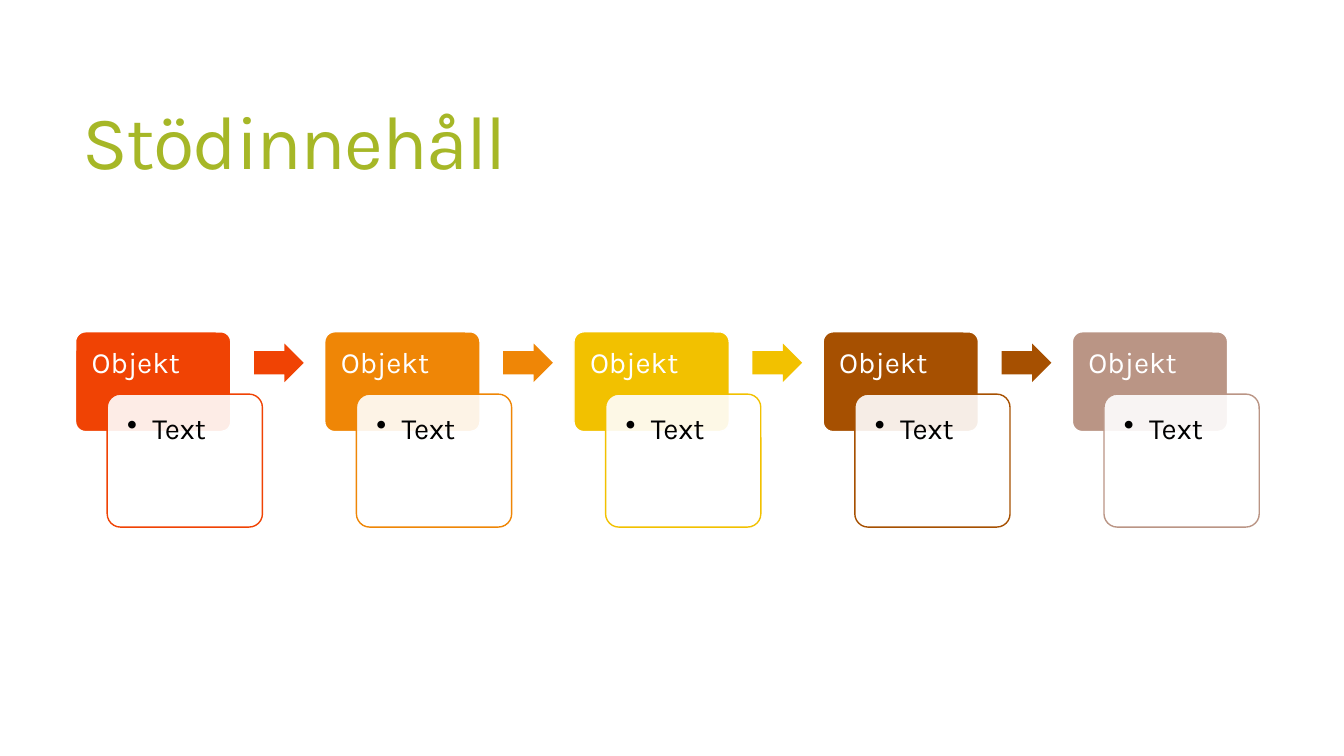
import pptx
import pptx.dml.color
import pptx.enum.shapes
import pptx.enum.text
import pptx.oxml.ns
import pptx.util
from lxml import etree

Pt = pptx.util.Pt
SHAPE = pptx.enum.shapes.MSO_SHAPE
ALIGN = pptx.enum.text.PP_ALIGN
ANCHOR = pptx.enum.text.MSO_ANCHOR

FONT = "Karla"
STEP_COLORS = ["F04304", "EF8606", "F2C100", "A65001", "BA9585"]
STEP_LEFT, STEP_PITCH = 54, 178
BOX_WIDTH = 110.9


def color(hex_value):
    return pptx.dml.color.RGBColor.from_string(hex_value)


def apply(target, values):
    for name, value in values.items():
        setattr(target, name, value)


def add_xml(parent, tag, **attributes):
    return etree.SubElement(parent, pptx.oxml.ns.qn(tag), attributes)


def write(shape, text, size, hex_value, inset, anchor=ANCHOR.TOP, spacing=0.9):
    """Put one left-aligned line of text in a shape and return its paragraph."""
    frame = shape.text_frame
    frame.text = text
    apply(frame, {
        "word_wrap": True,
        "auto_size": pptx.enum.text.MSO_AUTO_SIZE.NONE,
        "vertical_anchor": anchor,
        "margin_left": Pt(inset),
        "margin_right": Pt(inset),
        "margin_top": Pt(inset),
        "margin_bottom": Pt(inset),
    })
    para = frame.paragraphs[0]
    apply(para, {"alignment": ALIGN.LEFT, "line_spacing": spacing})
    span = para.runs[0]
    apply(span.font, {"name": FONT, "size": Pt(size)})
    span.font.color.rgb = color(hex_value)
    return para


def add_bullet(para, indent):
    properties = para._p.get_or_add_pPr()
    properties.set("marL", str(Pt(indent)))
    properties.set("indent", str(-Pt(indent)))
    add_xml(properties, "a:buChar", char="•")


def add_block(page, kind, place, fill, line=None, adjustments=(0.1,)):
    block = page.shapes.add_shape(kind, *map(Pt, place))
    block.shadow.inherit = False
    for index, value in enumerate(adjustments):
        block.adjustments[index] = value
    block.fill.solid()
    block.fill.fore_color.rgb = color(fill)
    if line:
        block.line.color.rgb = color(line)
        block.line.width = Pt(1)
    else:
        block.line.fill.background()
    return block


def set_opacity(shape, percent):
    fill = shape._element.spPr.find(pptx.oxml.ns.qn("a:solidFill"))
    add_xml(fill[0], "a:alpha", val=str(percent * 1000))


def add_title(page, text):
    title = page.shapes.title
    apply(title, {"left": Pt(51.8), "top": Pt(39.6),
                  "width": Pt(848.2), "height": Pt(130.3)})
    para = write(title, text, 54, "A6B727", 7.2, ANCHOR.MIDDLE, 0.85)
    para.runs[0].font._element.set("spc", "-120")


def add_step(page, left, hex_value, has_arrow):
    heading = add_block(page, SHAPE.ROUNDED_RECTANGLE,
                        (left, 237, BOX_WIDTH, 71.3), hex_value, "FFFFFF")
    write(heading, "Objekt", 21, "FFFFFF", 9.4)
    detail = add_block(page, SHAPE.ROUNDED_RECTANGLE,
                       (left + 22.6, 281.5, BOX_WIDTH, 95), "FFFFFF", hex_value)
    set_opacity(detail, 90)
    add_bullet(write(detail, "Text", 21, "000000", 11.5), 18)
    if has_arrow:
        add_block(page, SHAPE.RIGHT_ARROW, (left + 127.5, 245.4, 35.5, 27.5),
                  hex_value, adjustments=(0.6, 0.5))


def main():
    deck = pptx.Presentation()
    apply(deck, {"slide_width": Pt(960), "slide_height": Pt(540)})
    page = deck.slides.add_slide(deck.slide_layouts[5])
    add_title(page, "Stödinnehåll")
    for index, hex_value in enumerate(STEP_COLORS):
        add_step(page, STEP_LEFT + index * STEP_PITCH, hex_value,
                 has_arrow=index < len(STEP_COLORS) - 1)
    deck.save("out.pptx")


if __name__ == "__main__":
    main()
